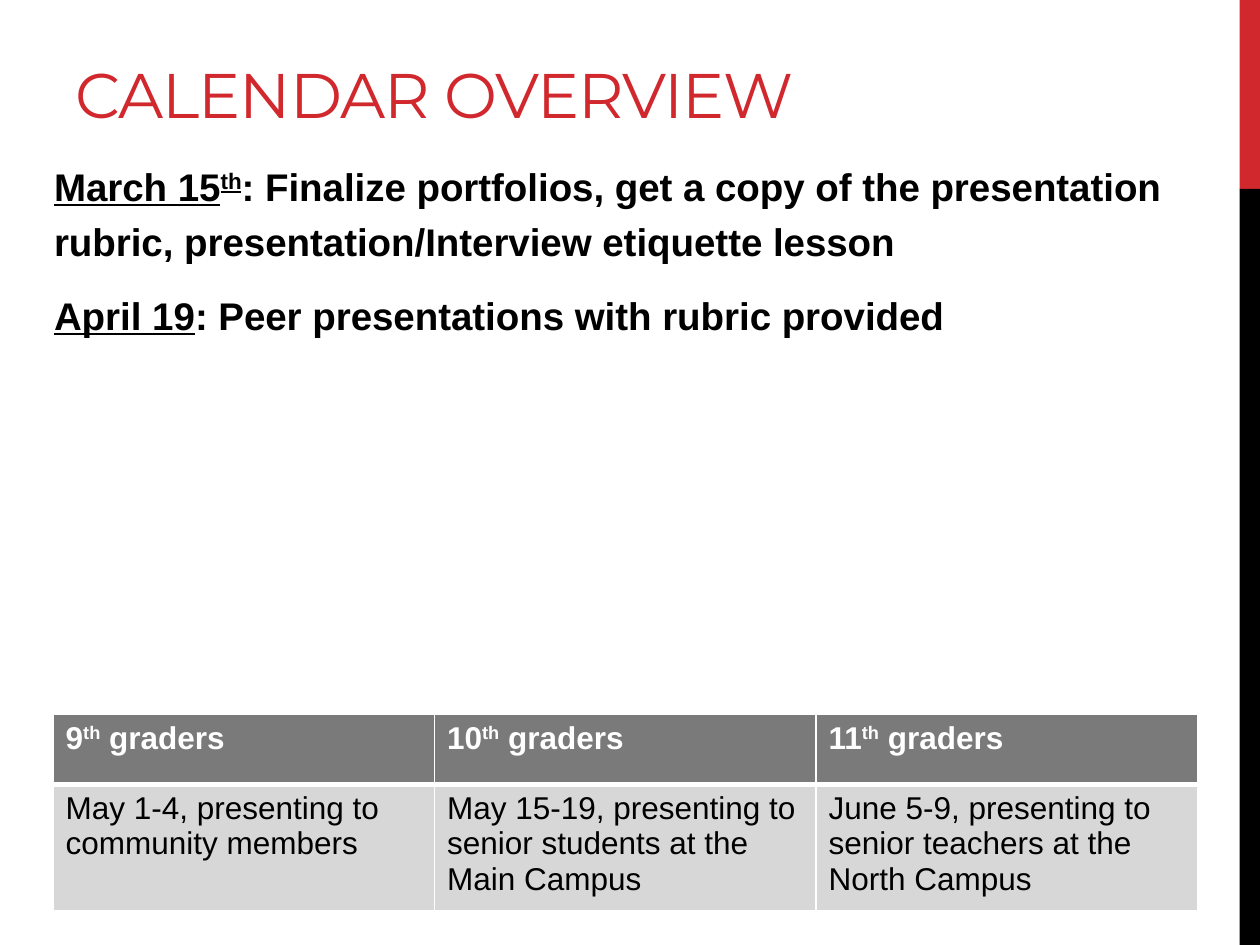
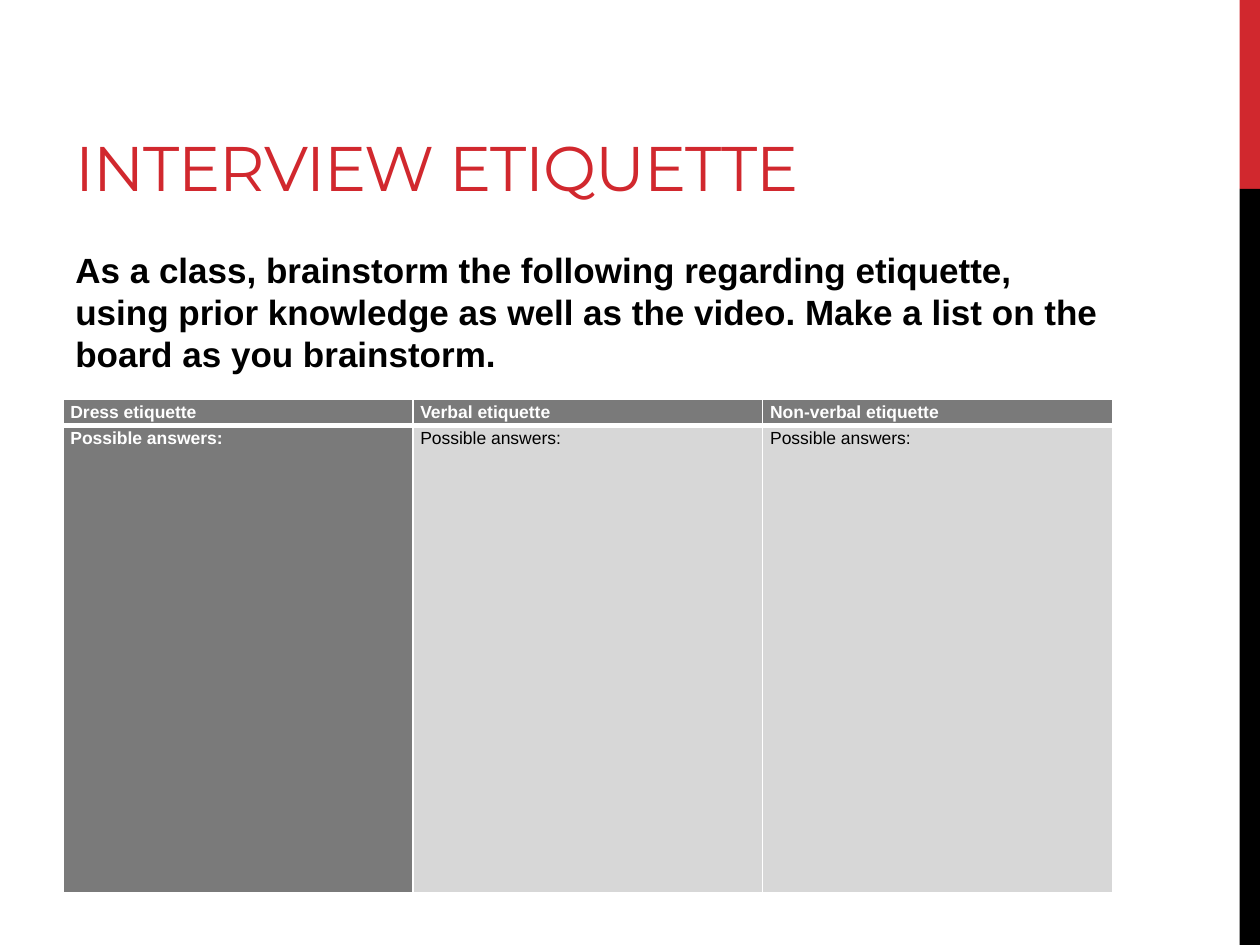
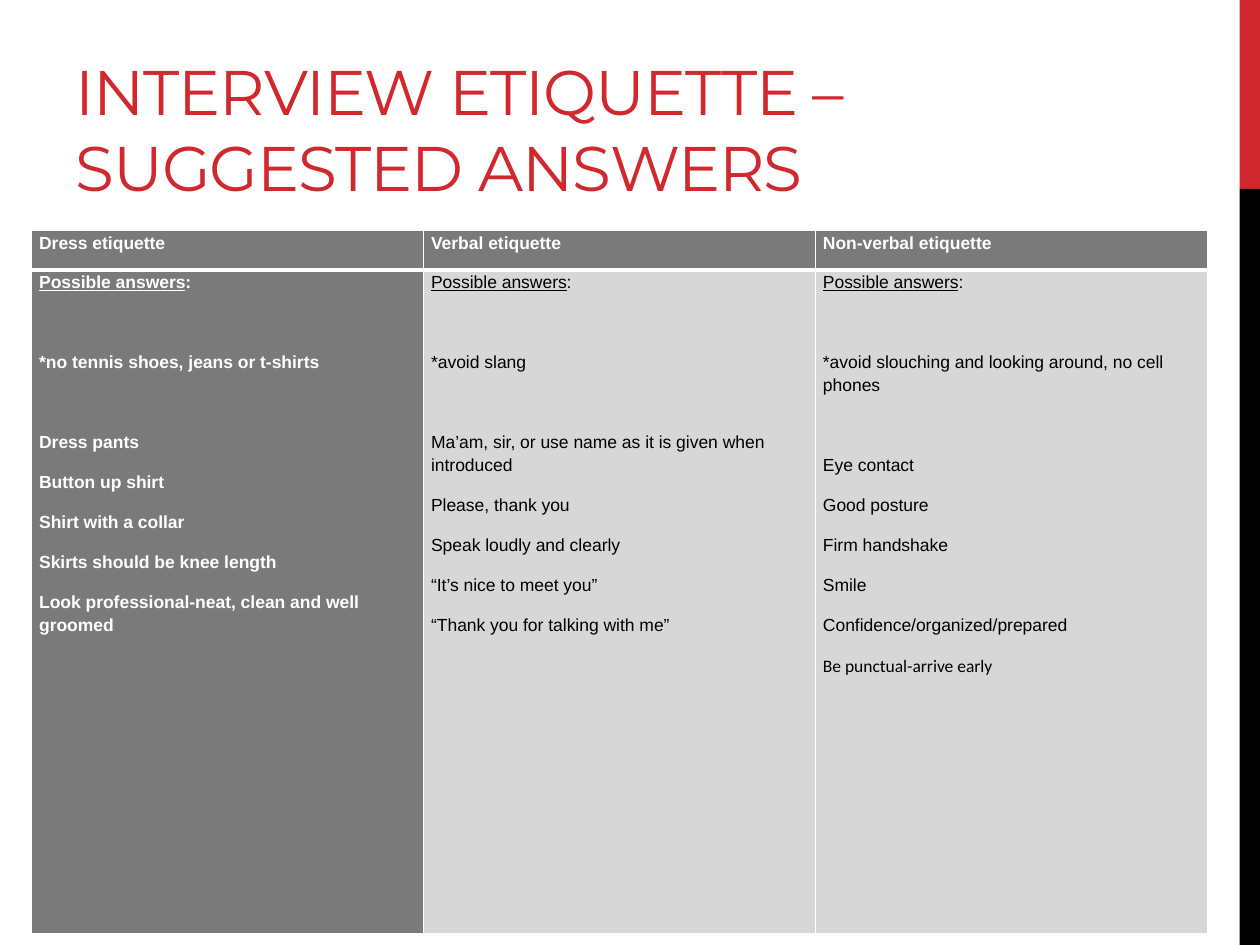
import pptx
import pptx.dml.color
import pptx.enum.shapes
import pptx.enum.text
import pptx.oxml.ns
import pptx.util
from lxml import etree

Cm, Pt = pptx.util.Cm, pptx.util.Pt

COLORS = {
    "red": "D1282E",
    "black": "000000",
    "white": "FFFFFF",
    "dark": "7A7A7A",
    "light": "D7D7D7",
}
TITLE_ONLY = 5
SUP = {"sup": True}
LINE = {"underline": True}
SECTION_GAP = 33  # points after a paragraph that closes a group
ETIQUETTE = ["Dress etiquette", "Verbal etiquette", "Non-verbal etiquette"]


def rgb(name):
    return pptx.dml.color.RGBColor.from_string(COLORS[name])


def add_text(p, text, size=18, color="black", bold=False, underline=False,
             font="Arial", sup=False, spacing=None):
    r = p.add_run()
    r.text = text
    f = r.font
    f.name, f.size, f.bold, f.underline = font, Pt(size), bold, underline
    f.color.rgb = rgb(color)
    rPr = r._r.get_or_add_rPr()
    if sup:
        rPr.set("baseline", "30000")
    if spacing is not None:
        rPr.set("spc", str(spacing))


def fill_frame(tf, paragraphs, line=None, before=None, after=None, **fmt):
    """Write paragraphs, each a string or a list of strings and (text, format) pairs.

    A format may hold "after", which replaces the space after its paragraph.
    """
    tf.word_wrap = True
    for i, runs in enumerate(paragraphs):
        p = tf.add_paragraph() if i else tf.paragraphs[0]
        gap = after
        for run in [runs] if isinstance(runs, str) else runs:
            text, extra = (run, {}) if isinstance(run, str) else run
            extra = dict(extra)
            gap = extra.pop("after", gap)
            add_text(p, text, **{**fmt, **extra})
        p.line_spacing = line
        p.space_before = None if before is None else Pt(before)
        p.space_after = None if gap is None else Pt(gap)


def add_bands(s):
    for top, height, color in ((0, 3.81, "red"), (3.81, 15.24, "black")):
        sp = s.shapes.add_shape(pptx.enum.shapes.MSO_SHAPE.RECTANGLE,
                                Cm(24.99), Cm(top), Cm(0.41), Cm(height))
        sp.shadow.inherit = False
        sp.fill.solid()
        sp.fill.fore_color.rgb = rgb(color)
        sp.line.fill.background()


def add_slide(prs, title, width, height=3.81):
    s = prs.slides.add_slide(prs.slide_layouts[TITLE_ONLY])
    add_bands(s)
    sp = s.shapes.title
    sp.left, sp.top, sp.width, sp.height = Cm(1.27), Cm(0.43), Cm(width), Cm(height)
    tf = sp.text_frame
    tf.auto_size = pptx.enum.text.MSO_AUTO_SIZE.NONE
    tf.vertical_anchor = pptx.enum.text.MSO_ANCHOR.BOTTOM
    fill_frame(tf, [title], size=36, color="red", font="Montserrat", spacing=-60)
    tf.paragraphs[0].alignment = pptx.enum.text.PP_ALIGN.LEFT
    return s


def add_body(s, left, top, width, height, paragraphs, **fmt):
    sp = s.shapes.add_textbox(Cm(left), Cm(top), Cm(width), Cm(height))
    fill_frame(sp.text_frame, paragraphs, after=6, bold=True, **fmt)


def set_borders(cell, bottom):
    """Draw white edges of 1 pt, with the bottom one of the given width."""
    tcPr = cell._tc.get_or_add_tcPr()
    qn = pptx.oxml.ns.qn
    for side, width in (("L", 1), ("R", 1), ("T", 1), ("B", bottom)):
        ln = etree.SubElement(tcPr, qn("a:ln" + side), w=str(Pt(width)))
        solid = etree.SubElement(ln, qn("a:solidFill"))
        etree.SubElement(solid, qn("a:srgbClr"), val=COLORS["white"])


def add_table(s, left, top, width, heights, rows, dark_column=False,
              tight=False, **fmt):
    """Add a table whose rows hold cells, each a list of paragraphs."""
    columns = len(rows[0])
    tbl = s.shapes.add_table(len(rows), columns, Cm(left), Cm(top),
                             Cm(width), Cm(sum(heights))).table
    tbl.horz_banding = False
    tbl.first_col = dark_column
    for i, (row, height) in enumerate(zip(rows, heights)):
        tbl.rows[i].height = Cm(height)
        for j, paragraphs in enumerate(row):
            cell = tbl.cell(i, j)
            dark = i == 0 or (dark_column and j == 0)
            set_borders(cell, bottom=1 if i else 3)
            cell.fill.solid()
            cell.fill.fore_color.rgb = rgb("dark" if dark else "light")
            if tight:
                cell.margin_left = cell.margin_right = Cm(0.15)
                cell.margin_top = cell.margin_bottom = 0
            fill_frame(cell.text_frame, paragraphs, bold=dark,
                       color="white" if dark else "black", **fmt)


def add_etiquette_table(s, left, top, width, heights, answers):
    add_table(s, left, top, width, heights, [[[head] for head in ETIQUETTE], answers],
              dark_column=True, tight=True, size=10, line=1.15, after=10)


def answer_cell(avoid, *advice):
    return [[("Possible answers", LINE), (":", {"after": SECTION_GAP})],
            [(avoid, {"after": SECTION_GAP})], *advice]


def add_calendar(prs):
    s = add_slide(prs, "CALENDAR OVERVIEW", 21.59, 2.34)
    add_body(s, 0.84, 2.97, 23.93, 10.59, [
        [("March 15", LINE), ("th", {**LINE, **SUP}),
         ": Finalize portfolios, get a copy of the presentation rubric, "
         "presentation/Interview etiquette lesson"],
        [("April 19", LINE), ": Peer presentations with rubric provided"],
    ], size=22, line=1.2, before=4.4)
    grades = [[[grade, ("th", SUP), " graders"]] for grade in ("9", "10", "11")]
    dates = [["May 1-4, presenting to community members"],
             ["May 15-19, presenting to senior students at the Main Campus"],
             ["June 5-9, presenting to senior teachers at the North Campus"]]
    add_table(s, 1.07, 14.4, 23.07, [1.42, 2.44], [grades, dates], size=18)


def add_brainstorm(prs):
    s = add_slide(prs, "INTERVIEW ETIQUETTE", 21.16)
    add_body(s, 1.27, 4.88, 21.16, 12.14, [
        "As a class, brainstorm the following regarding etiquette, using prior "
        "knowledge as well as the video. Make a list on the board as you brainstorm.",
    ], size=20, before=4)
    add_etiquette_table(s, 1.27, 8.05, 21.16, [0.53, 9.42],
                        [["Possible answers:"]] * len(ETIQUETTE))


def add_answers(prs):
    s = add_slide(prs, "INTERVIEW ETIQUETTE – SUGGESTED ANSWERS", 20.96)
    add_etiquette_table(s, 0.64, 4.65, 23.7, [0.79, 13.39], [
        answer_cell("*no tennis shoes, jeans or t-shirts",
                    "Dress pants", "Button up shirt", "Shirt with a collar",
                    "Skirts should be knee length",
                    "Look professional-neat, clean and well groomed"),
        answer_cell("*avoid slang",
                    "Ma’am, sir, or use name as it is given when introduced",
                    "Please, thank you", "Speak loudly and clearly",
                    "“It’s nice to meet you”", "“Thank you for talking with me”"),
        answer_cell("*avoid slouching and looking around, no cell phones",
                    "Eye contact", "Good posture", "Firm handshake", "Smile",
                    "Confidence/organized/prepared",
                    [("Be punctual-arrive early", {"font": "Calibri"})]),
    ])


def main():
    prs = pptx.Presentation()
    prs.slide_width, prs.slide_height = Cm(25.4), Cm(19.05)
    add_calendar(prs)
    add_brainstorm(prs)
    add_answers(prs)
    prs.save("out.pptx")


if __name__ == "__main__":
    main()
